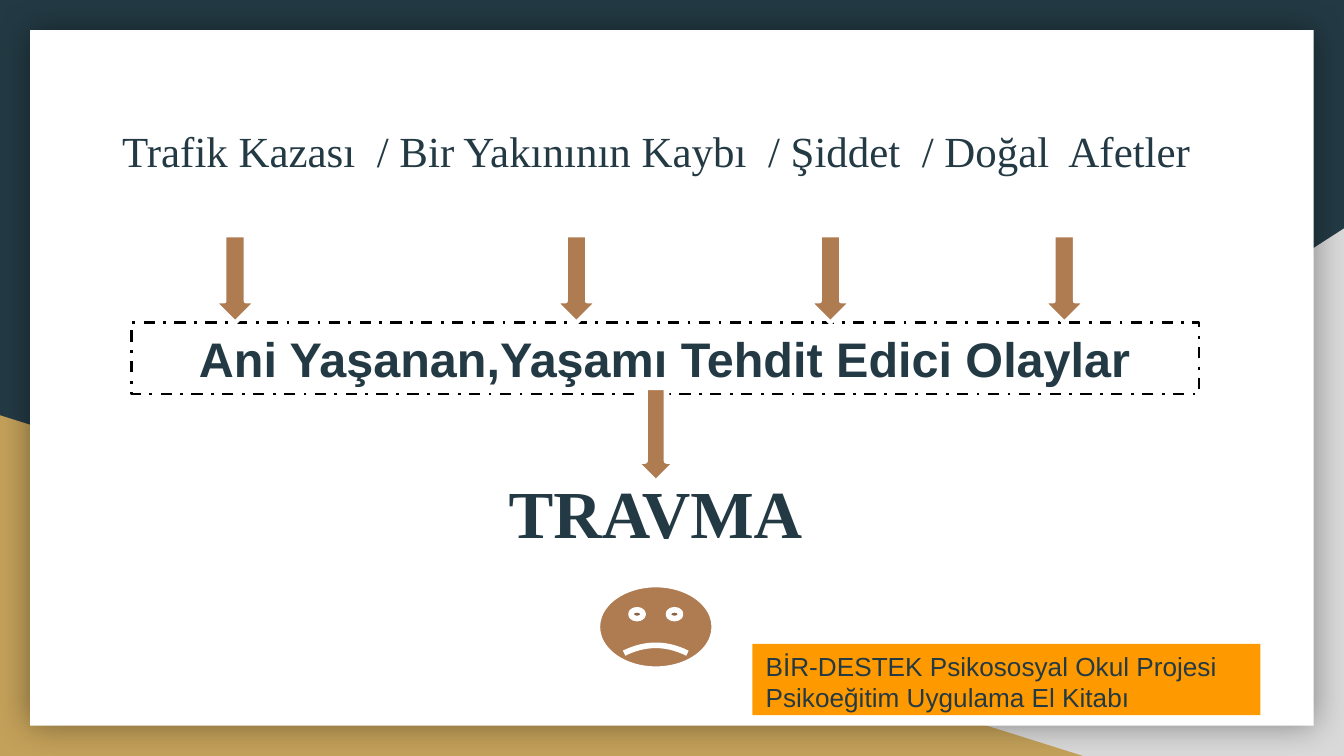
from dataclasses import dataclass

from lxml.etree import SubElement
from pptx import Presentation
from pptx.dml.color import RGBColor
from pptx.enum.dml import MSO_LINE
from pptx.enum.shapes import MSO_SHAPE
from pptx.enum.text import MSO_ANCHOR, PP_ALIGN
from pptx.oxml.ns import qn
from pptx.util import Cm, Pt


@dataclass(frozen=True)
class Theme:
    ink: str = "233A44"
    paper: str = "FFFFFF"
    grey: str = "D9D9D9"
    gold: str = "C4A15A"
    brown: str = "AF7B51"
    orange: str = "FF9900"
    black: str = "000000"
    serif: str = "Times New Roman"
    sans: str = "Arial"
    causes_size: float = 23
    events_size: float = 26
    result_size: float = 36
    credit_size: float = 14


@dataclass(frozen=True)
class Box:
    left: float
    top: float
    width: float
    height: float

    def inner(self, left, top, width, height):
        return Box(self.left + left, self.top + top, width, height)

    def lengths(self):
        return Cm(self.left), Cm(self.top), Cm(self.width), Cm(self.height)


THEME = Theme()


def add_figure(slide, kind, box, fill=None, line=None, line_width=1.0):
    shape = slide.shapes.add_shape(kind, *box.lengths())
    shape.shadow.inherit = False
    if fill:
        shape.fill.solid()
        shape.fill.fore_color.rgb = RGBColor.from_string(fill)
    else:
        shape.fill.background()
    if line:
        shape.line.color.rgb = RGBColor.from_string(line)
        shape.line.width = Pt(line_width)
    else:
        shape.line.fill.background()
    return shape


def write_text(shape, text, font, size, bold=False, align=PP_ALIGN.LEFT, line_spacing=1.0):
    frame = shape.text_frame
    frame.word_wrap = True
    frame.vertical_anchor = MSO_ANCHOR.TOP
    frame.text = text
    for paragraph in frame.paragraphs:
        paragraph.alignment = align
        paragraph.line_spacing = line_spacing
        for run in paragraph.runs:
            run.font.name = font
            run.font.size = Pt(size)
            run.font.bold = bold
            run.font.color.rgb = RGBColor.from_string(THEME.ink)


def add_soft_shadow(shape, blur, opacity):
    effects = shape._element.spPr.find(qn("a:effectLst"))
    shadow = SubElement(effects, qn("a:outerShdw"), blurRad=str(Pt(blur)),
                        dist="0", dir="0", algn="ctr", rotWithShape="0")
    color = SubElement(shadow, qn("a:srgbClr"), val=THEME.black)
    SubElement(color, qn("a:alpha"), val=str(opacity * 1000))


def add_down_arrow(slide, box, line_width):
    add_figure(slide, MSO_SHAPE.DOWN_ARROW, box, THEME.brown, THEME.paper, line_width)


def add_backdrop(slide, box):
    slide.background.fill.solid()
    slide.background.fill.fore_color.rgb = RGBColor.from_string(THEME.ink)
    grey_box = box.inner(box.width - 15.44, box.height - 9.97, 15.44, 9.97)
    grey_corner = add_figure(slide, MSO_SHAPE.RIGHT_TRIANGLE, grey_box, THEME.grey)
    grey_corner._element.spPr.get_or_add_xfrm().set("flipH", "1")
    gold_box = box.inner(0, box.height - 6.44, 20.47, 6.44)
    add_figure(slide, MSO_SHAPE.RIGHT_TRIANGLE, gold_box, THEME.gold)
    margin = 0.57
    panel_box = box.inner(margin, margin, box.width - 2 * margin, box.height - 2 * margin)
    panel = add_figure(slide, MSO_SHAPE.RECTANGLE, panel_box, THEME.paper)
    add_soft_shadow(panel, blur=18, opacity=40)


def add_causes(slide, box):
    heading = slide.shapes.add_textbox(*box.inner(0, 0, box.width, 2.64).lengths())
    write_text(heading, "Trafik Kazası  / Bir Yakınının Kaybı  / Şiddet  / Doğal  Afetler",
               font=THEME.serif, size=THEME.causes_size, line_spacing=0.9)


def add_cause_arrows(slide, box):
    for left in (1.98, 8.43, 13.23, 17.65):
        add_down_arrow(slide, box.inner(left, 0, 0.81, box.height), line_width=2.25)


def add_events(slide, box):
    frame = add_figure(slide, MSO_SHAPE.RECTANGLE, box, line=THEME.black, line_width=1.5)
    frame.line.dash_style = MSO_LINE.DASH_DOT
    write_text(frame, "Ani Yaşanan,Yaşamı Tehdit Edici Olaylar", font=THEME.sans,
               size=THEME.events_size, bold=True, align=PP_ALIGN.CENTER)


def add_result(slide, box):
    center = box.width / 2
    add_down_arrow(slide, box.inner(center - 0.4, 0, 0.81, 1.8), line_width=3)
    label = slide.shapes.add_textbox(*box.inner(0, 1.47, box.width, 1.35).lengths())
    write_text(label, "TRAVMA", font=THEME.serif, size=THEME.result_size,
               bold=True, align=PP_ALIGN.CENTER)
    face = add_figure(slide, MSO_SHAPE.SMILEY_FACE, box.inner(center - 1.1, 3.73, 2.21, 1.6),
                      THEME.brown, THEME.paper, line_width=3)
    face.adjustments[0] = -0.05


def add_credit(slide, box):
    credit = add_figure(slide, MSO_SHAPE.RECTANGLE, box, THEME.orange)
    write_text(credit, "BİR-DESTEK Psikososyal Okul Projesi\nPsikoeğitim Uygulama El Kitabı",
               font=THEME.sans, size=THEME.credit_size)


def main():
    page = Box(0, 0, 25.4, 14.29)
    presentation = Presentation()
    presentation.slide_width = Cm(page.width)
    presentation.slide_height = Cm(page.height)
    slide = presentation.slides.add_slide(presentation.slide_layouts[6])
    add_backdrop(slide, page)
    add_causes(slide, page.inner(2.06, 2.34, 21.06, 2.64))
    add_events(slide, page.inner(2.49, 6.1, 20.17, 1.35))
    add_credit(slide, page.inner(14.22, 12.17, 9.6, 1.35))
    add_cause_arrows(slide, page.inner(2.06, 4.45, 21.06, 1.65))
    add_result(slide, page.inner(9.09, 7.32, 6.6, 5.33))
    presentation.save("out.pptx")


if __name__ == "__main__":
    main()
